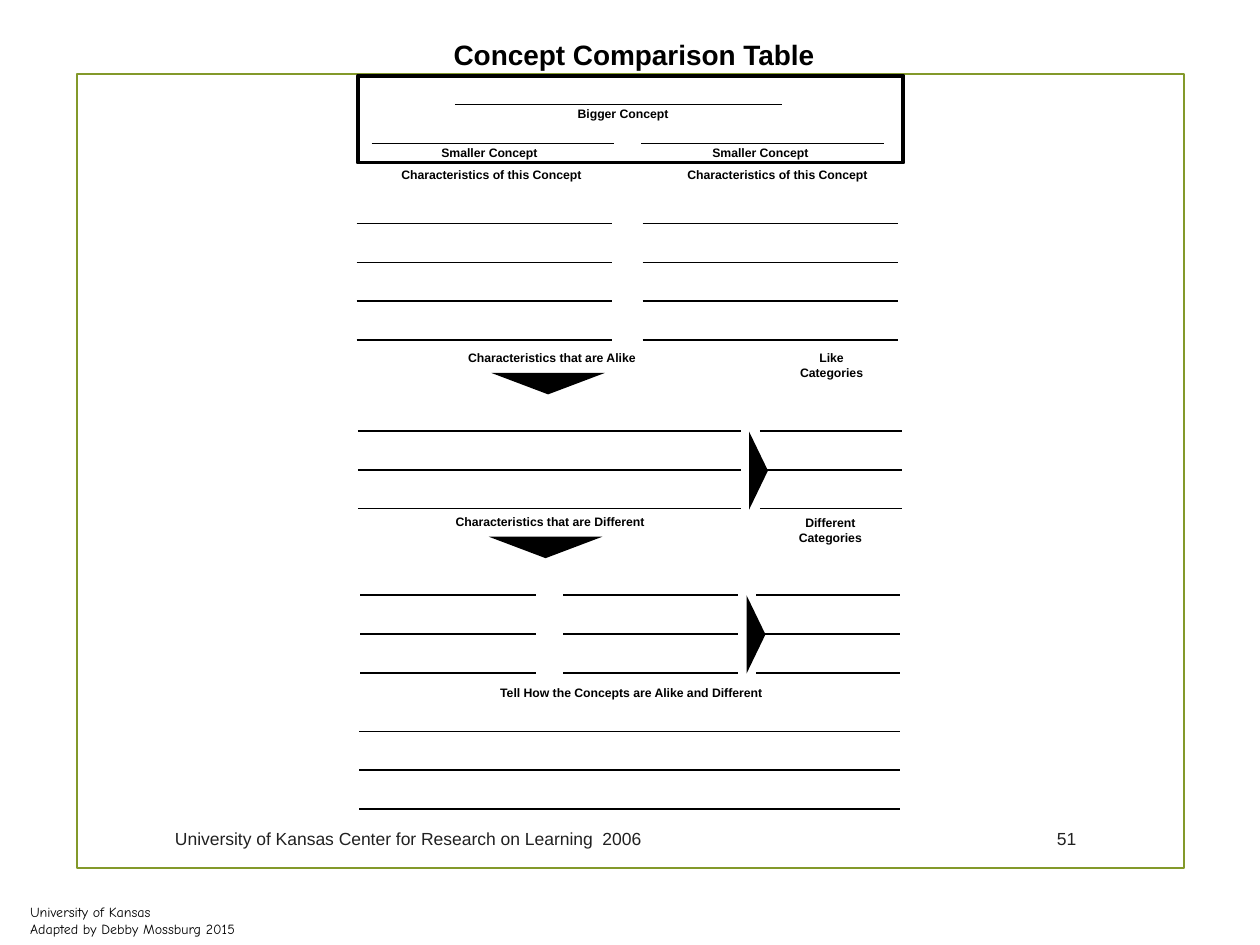
from dataclasses import dataclass

from lxml import etree
from pptx import Presentation
from pptx import util as u
from pptx.dml.color import RGBColor
from pptx.enum import shapes, text
from pptx.oxml.ns import qn

# Grid: 100 columns by 75 rows of square cells
COLS, ROWS = 100, 75
CELL = u.Inches(0.1)
LINE_STEP = 3.08
BLACK, GREEN, GREY = "000000", "83992A", "212121"


@dataclass
class Box:
    col: float
    row: float
    cols: float
    rows: float

    def emu(self) -> list[int]:
        return [cells(v) for v in (self.col, self.row, self.cols, self.rows)]


@dataclass
class Ruling:
    """Writing lines between two columns, going down by LINE_STEP."""
    left: float
    right: float
    row: float
    count: int = 1


@dataclass
class Label:
    text: str
    box: Box


def cells(n: float) -> int:
    return round(n * CELL)


def rgb(value: str) -> RGBColor:
    return RGBColor.from_string(value)


def write(sp, content: str, *, size: float = 7, font: str = "Arial",
          color: str = BLACK, bold: bool = False, wrap: bool = False,
          align=text.PP_ALIGN.LEFT) -> None:
    tf = sp.text_frame
    tf.auto_size = text.MSO_AUTO_SIZE.NONE
    tf.word_wrap = wrap
    tf.vertical_anchor = text.MSO_ANCHOR.TOP
    tf.text = content
    for p in tf.paragraphs:
        p.alignment = align
        for r in p.runs:
            r.font.size, r.font.name, r.font.bold = u.Pt(size), font, bold
            r.font.color.rgb = rgb(color)


def add_text(slide, label: Label, **fmt) -> None:
    write(slide.shapes.add_textbox(*label.box.emu()), label.text, **fmt)


def add_frame(slide, box: Box, color: str, width: float) -> None:
    sp = slide.shapes.add_shape(shapes.MSO_SHAPE.RECTANGLE, *box.emu())
    sp.shadow.inherit = False
    sp.fill.background()
    sp.line.color.rgb = rgb(color)
    sp.line.width = u.Pt(width)


def add_arrow(slide, box: Box, rotation: int) -> None:
    sp = slide.shapes.add_shape(shapes.MSO_SHAPE.ISOSCELES_TRIANGLE, *box.emu())
    sp.shadow.inherit = False
    sp.fill.solid()
    sp.fill.fore_color.rgb = rgb(BLACK)
    sp.line.fill.background()
    sp.rotation = rotation


def add_ruling(slide, ruling: Ruling) -> None:
    for i in range(ruling.count):
        y = cells(ruling.row + i * LINE_STEP)
        line = slide.shapes.add_connector(
            shapes.MSO_CONNECTOR.STRAIGHT, cells(ruling.left), y, cells(ruling.right), y)
        line.line.color.rgb = rgb(BLACK)
        line.line.width = u.Pt(1)
        etree.SubElement(line._element.spPr, qn("a:effectLst"))


RULINGS = [
    # Concept names
    Ruling(36.1, 62.1, 8.3), Ruling(29.5, 48.7, 11.4), Ruling(50.9, 70.2, 11.4),
    # Characteristics of each concept
    Ruling(28.3, 48.6, 17.75, 4), Ruling(51, 71.3, 17.75, 4),
    # Alike
    Ruling(28.4, 58.8, 34.2, 3), Ruling(60.3, 71.6, 34.2, 3),
    # Different
    Ruling(28.6, 42.5, 47.25, 3), Ruling(44.7, 58.6, 47.25, 3), Ruling(60, 71.4, 47.25, 3),
    # Summary
    Ruling(28.5, 71.4, 58.05, 3),
]

LABELS = [
    Label("Bigger Concept", Box(44.8, 7.9, 9.3, 2.2)),
    Label("Smaller Concept", Box(34, 11, 9.7, 2.2)),
    Label("Smaller Concept", Box(55.5, 11, 9.7, 2.2)),
    Label("Characteristics of this Concept", Box(30.8, 12.8, 16.4, 2.2)),
    Label("Characteristics of this Concept", Box(53.5, 12.8, 16.4, 2.2)),
    Label("Characteristics that are Alike", Box(36.1, 27.3, 15.4, 2.2)),
    Label("Like\nCategories", Box(62.5, 27.3, 7, 3.3)),
    Label("Characteristics that are Different", Box(35.1, 40.3, 17.1, 2.2)),
    Label("Different\nCategories", Box(62.4, 40.4, 7, 3.3)),
    Label("Tell How the Concepts are Alike and Different", Box(38.6, 53.9, 23, 2.2)),
]

DOWN, RIGHT = 180, 90
ARROWS = [
    (Box(39, 29.6, 9, 1.7), DOWN), (Box(38.8, 42.6, 9, 1.7), DOWN),
    (Box(57.1, 36.6, 6.2, 1.5), RIGHT), (Box(56.9, 49.6, 6.2, 1.5), RIGHT),
]


def main() -> None:
    prs = Presentation()
    prs.slide_width, prs.slide_height = cells(COLS), cells(ROWS)
    slide = prs.slides.add_slide(prs.slide_layouts[5])

    # Page frame and footers
    add_frame(slide, Box(6.1, 5.9, 87.9, 63), GREEN, 1.25)
    add_text(slide, Label("University of Kansas\nAdapted by Debby Mossburg 2015",
                          Box(1.4, 71.2, 41.7, 2.5)), size=8, font="Comic Neue", wrap=True)
    for label in (
        Label("University of Kansas Center for Research on Learning  2006",
              Box(12.9, 65.2, 55.8, 3.1)),
        Label("51", Box(82.9, 65.2, 4.3, 3.1)),
    ):
        add_text(slide, label, size=10, color=GREY, wrap=True)

    # Title
    title = slide.shapes.title
    title.left, title.top, title.width, title.height = Box(35, 2.5, 30.9, 3.7).emu()
    write(title, "Concept Comparison Table", size=16, bold=True)

    # Comparison table
    add_frame(slide, Box(28.4, 6, 43.3, 6.9), BLACK, 2.25)
    for ruling in RULINGS:
        add_ruling(slide, ruling)
    for label in LABELS:
        add_text(slide, label, bold=True, align=text.PP_ALIGN.CENTER)
    for box, rotation in ARROWS:
        add_arrow(slide, box, rotation)

    prs.save("out.pptx")


if __name__ == "__main__":
    main()
